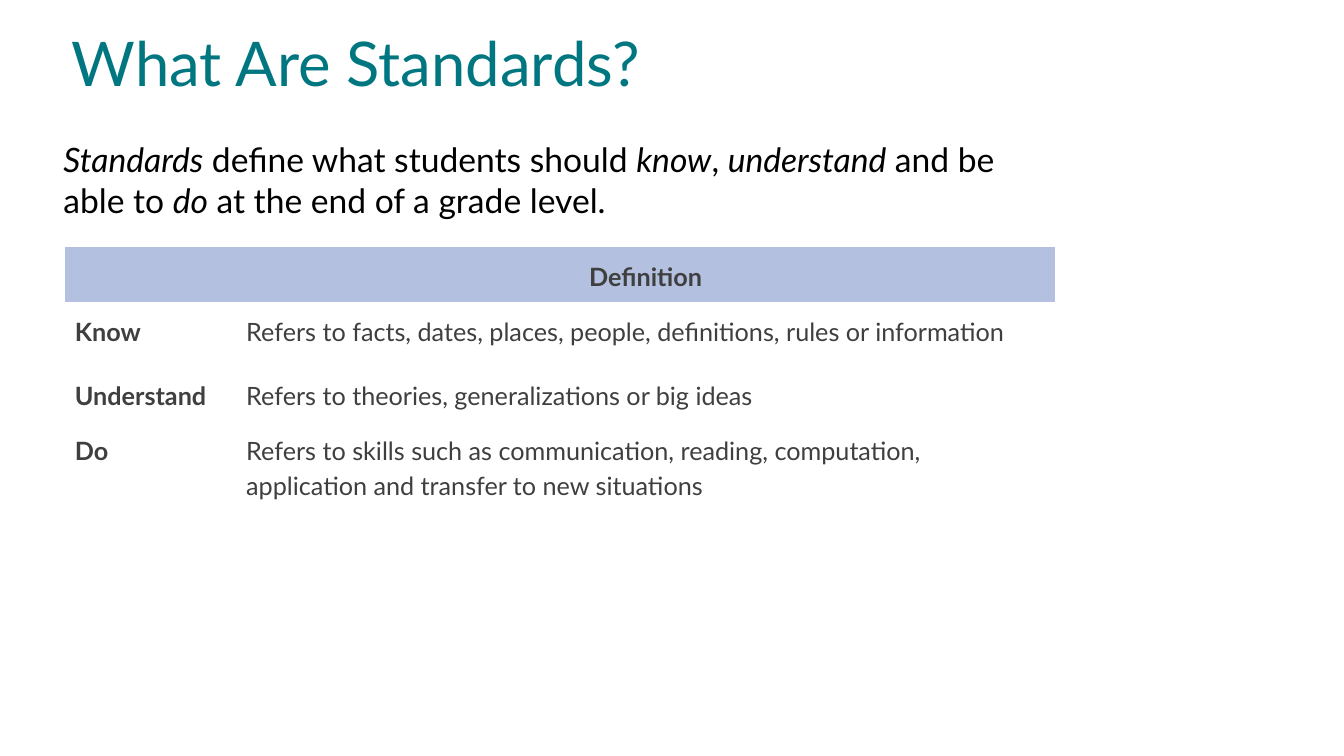
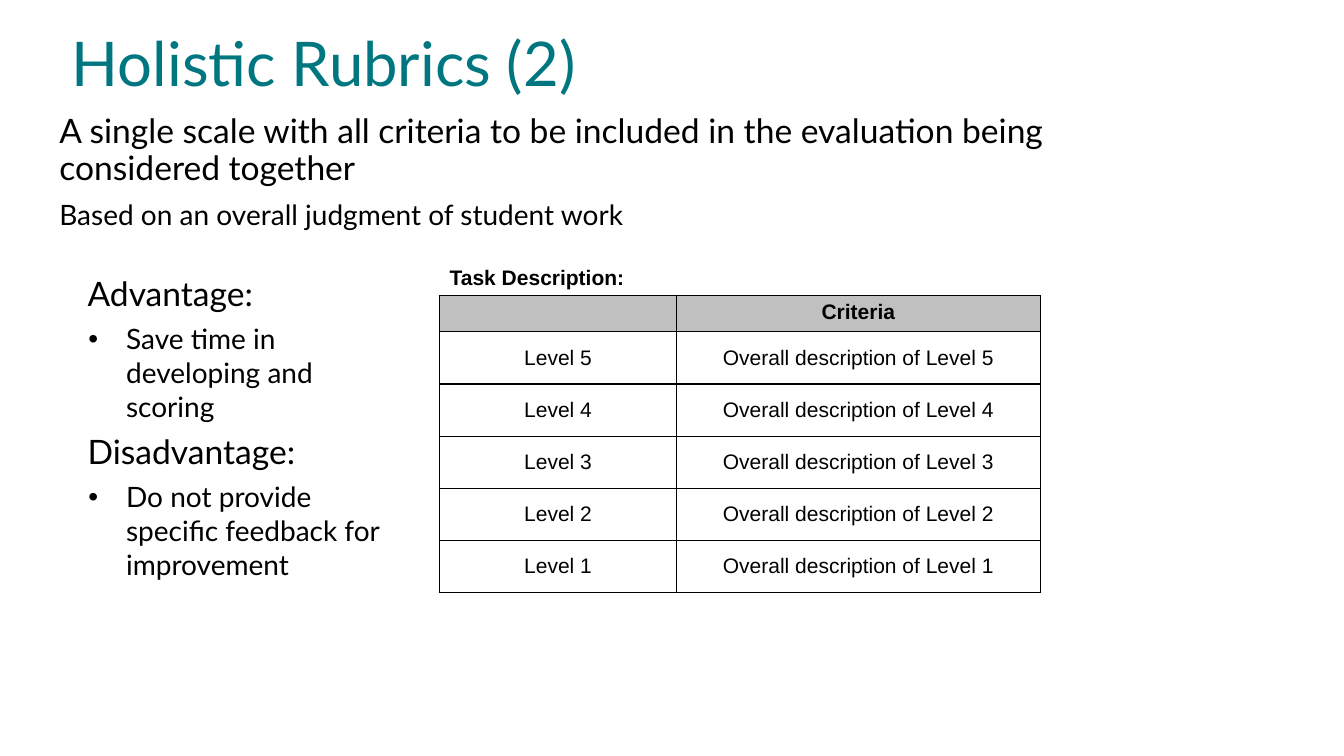
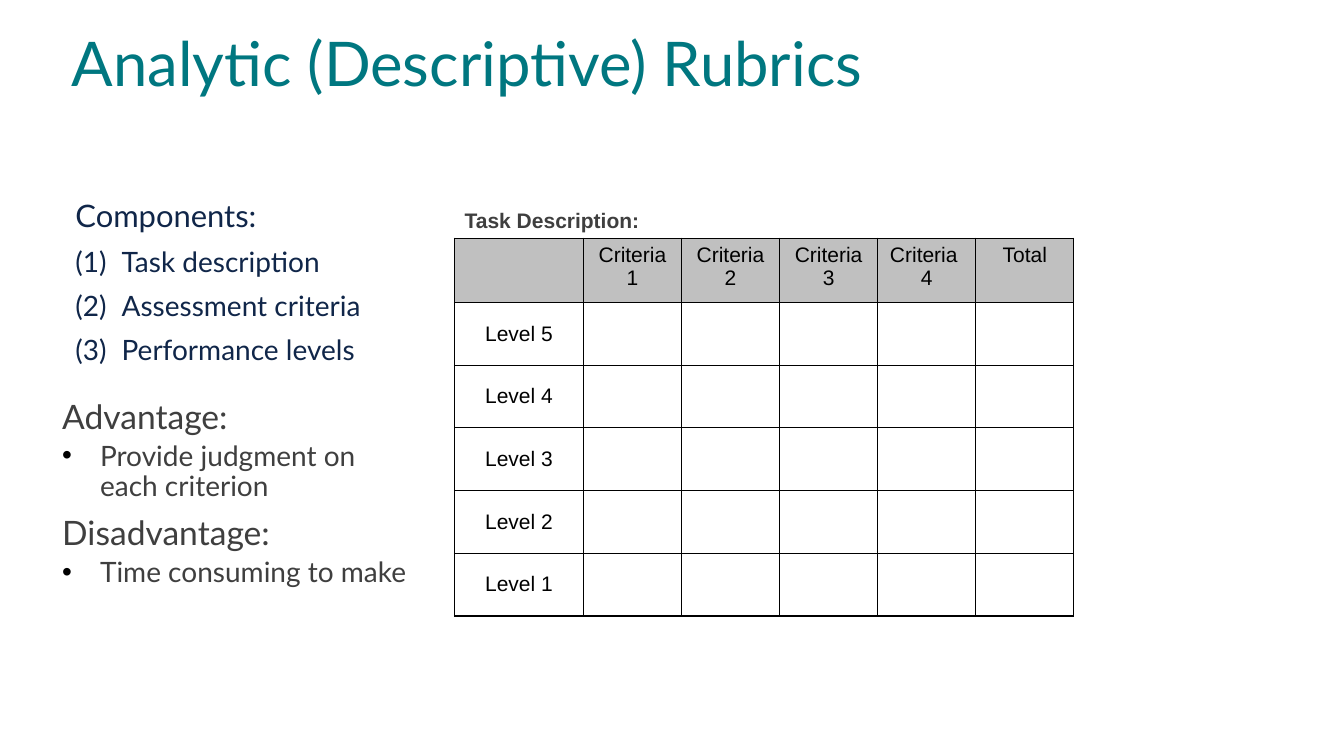
from dataclasses import dataclass

from lxml.etree import SubElement
from pptx import Presentation
from pptx.dml.color import RGBColor
from pptx.enum.text import MSO_ANCHOR as Anchor, MSO_AUTO_SIZE as AutoSize, PP_ALIGN as Align
from pptx.oxml.ns import qn
from pptx.util import Pt


@dataclass(frozen=True)
class Theme:
    heading: str = "007780"
    ink: str = "000000"
    charcoal: str = "3F3F3F"
    navy: str = "102649"
    header_blue: str = "B3C0DF"
    header_gray: str = "C0C0C0"
    text_font: str = "Lato"
    grid_font: str = "Arial"
    title: float = 44
    lead: float = 24
    intro: float = 22.1
    body: float = 20
    definition: float = 18
    grid: float = 15


THEME = Theme()
PLAIN_TABLE = "{2D5ABB26-0587-4C30-8999-92F81FD0307C}"
TITLE_PLACE = (44, 20, 677)
INSETS = (7.2, 3.6)
WIDE_INSETS = (7.2, 7.2)
LEVELS = [f"Level {number}" for number in range(5, 0, -1)]
CAPTION = "Task Description:"

STANDARDS_TEXT = [
    dict(text="*Standards* define what students should *know*, *understand* and be able to *do* "
              "at the end of a grade level.", size=THEME.lead),
]
DEFINITIONS = [
    ("", "Definition"),
    ("Know", "Refers to facts, dates, places, people, definitions, rules or information"),
    ("Understand", "Refers to theories, generalizations or big ideas"),
    ("Do", "Refers to skills such as communication, reading, computation, application "
           "and transfer to new situations"),
]

HOLISTIC_TEXT = [
    dict(text="A single scale with all criteria to be included in the evaluation being considered together",
         size=THEME.lead, spacing=0.9),
    dict(text="Based on an overall judgment of student work", size=THEME.body, spacing=0.9, before=10),
]
HOLISTIC_LEAD = dict(size=THEME.lead, margin=11.5)
HOLISTIC_POINT = dict(size=THEME.body, margin=39, indent=-27, before=6, bullet="•")
HOLISTIC_SIDES = [
    dict(HOLISTIC_LEAD, text="Advantage:"),
    dict(HOLISTIC_POINT, text="Save time in developing and scoring"),
    dict(HOLISTIC_LEAD, text="Disadvantage:", before=6),
    dict(HOLISTIC_POINT, text="Do not provide specific feedback for improvement"),
]
HOLISTIC_GRID = [
    ("", "Criteria"),
    *[(level, f"Overall description of {level}") for level in LEVELS],
]

COMPONENTS = ["Task description", "Assessment criteria", "Performance levels"]
COMPONENT_TEXT = [
    dict(text="Components:", size=THEME.intro, color=THEME.navy, spacing=0.9, margin=39, indent=-39),
    *[dict(text=component, size=THEME.body, color=THEME.navy, spacing=0.9, before=10,
           margin=33, indent=-33, bullet="number") for component in COMPONENTS],
]
ANALYTIC_LEAD = dict(size=THEME.lead, color=THEME.charcoal, spacing=0.9)
ANALYTIC_POINT = dict(size=THEME.body, color=THEME.charcoal, spacing=0.9, before=4,
                      margin=27, indent=-27, bullet="•", bullet_color=THEME.ink)
ANALYTIC_SIDES = [
    dict(ANALYTIC_LEAD, text="Advantage:"),
    dict(ANALYTIC_POINT, text="Provide judgment on each criterion"),
    dict(ANALYTIC_LEAD, text="Disadvantage:", before=10),
    dict(ANALYTIC_POINT, text="Time consuming to make"),
]
ANALYTIC_GRID = [
    ("", "Criteria 1", "Criteria 2", "Criteria 3", "Criteria \n4", "Total"),
    *[(level, "", "", "", "", "") for level in LEVELS],
]


def apply(target, **values):
    for name, value in values.items():
        setattr(target, name, value)


def add_solid_color(parent, color):
    SubElement(parent, qn("a:srgbClr"), val=color)


def add_bullet(properties, bullet, color):
    add_solid_color(SubElement(properties, qn("a:buClr")), color)
    if bullet == "number":
        SubElement(properties, qn("a:buAutoNum"), type="arabicParenBoth")
    else:
        SubElement(properties, qn("a:buFont"), typeface=THEME.grid_font)
        SubElement(properties, qn("a:buChar"), char=bullet)


def write_paragraph(paragraph, text, size, color=THEME.ink, font=THEME.text_font, bold=False,
                    align=Align.LEFT, spacing=None, before=0, margin=0, indent=0,
                    bullet=None, bullet_color=None):
    properties = paragraph._p.get_or_add_pPr()
    properties.set("marL", str(Pt(margin)))
    properties.set("indent", str(Pt(indent)))
    if bullet:
        add_bullet(properties, bullet, bullet_color or color)
    apply(paragraph, alignment=align, space_before=Pt(before))
    if spacing:
        paragraph.line_spacing = spacing
    for position, part in enumerate(text.split("*")):
        if part:
            run = paragraph.add_run()
            run.text = part
            apply(run.font, name=font, size=Pt(size), bold=bold, italic=position % 2 == 1)
            run.font.color.rgb = RGBColor.from_string(color)
    if not text:
        SubElement(paragraph._p, qn("a:endParaRPr"), sz=str(round(size * 100)))


def write_paragraphs(frame, paragraphs):
    for position, content in enumerate(paragraphs):
        paragraph = frame.add_paragraph() if position else frame.paragraphs[0]
        write_paragraph(paragraph, **content)


def set_insets(target, insets):
    side, end = map(Pt, insets)
    apply(target, margin_left=side, margin_right=side, margin_top=end, margin_bottom=end)


def format_frame(frame, paragraphs, insets=INSETS):
    apply(frame, word_wrap=True, auto_size=AutoSize.NONE, vertical_anchor=Anchor.TOP)
    set_insets(frame, insets)
    write_paragraphs(frame, paragraphs)


def add_slide(presentation, title, title_height):
    slide = presentation.slides.add_slide(presentation.slide_layouts[5])
    left, top, width = map(Pt, TITLE_PLACE)
    shape = slide.shapes.title
    apply(shape, left=left, top=top, width=width, height=Pt(title_height))
    format_frame(shape.text_frame, [dict(text=title, size=THEME.title, color=THEME.heading, spacing=0.9)])
    return slide


def add_text(slide, place, paragraphs, insets=INSETS):
    shape = slide.shapes.add_textbox(*map(Pt, place))
    format_frame(shape.text_frame, paragraphs, insets)


def add_plain_table(slide, left, top, widths, heights):
    frame = slide.shapes.add_table(len(heights), len(widths), Pt(left), Pt(top),
                                   Pt(sum(widths)), Pt(sum(heights)))
    table = frame.table
    apply(table, first_row=False, horz_banding=False)
    table._tbl.tblPr.find(qn("a:tableStyleId")).text = PLAIN_TABLE
    for column, width in zip(table.columns, widths):
        column.width = Pt(width)
    for row, height in zip(table.rows, heights):
        row.height = Pt(height)
    return table


def fill_cell(cell, text, fill=None, borders="", anchor=Anchor.TOP, insets=INSETS, **text_format):
    for side in borders:
        line = SubElement(cell._tc.get_or_add_tcPr(), qn(f"a:ln{side}"), w=str(Pt(1)))
        add_solid_color(SubElement(line, qn("a:solidFill")), THEME.ink)
    if fill:
        cell.fill.solid()
        cell.fill.fore_color.rgb = RGBColor.from_string(fill)
    else:
        cell.fill.background()
    cell.vertical_anchor = anchor
    set_insets(cell, insets)
    write_paragraphs(cell.text_frame, [dict(text_format, text=line) for line in text.split("\n")])


def add_definition_table(slide, left, top, widths, heights):
    table = add_plain_table(slide, left, top, widths, heights)
    for row, texts in enumerate(DEFINITIONS):
        for column, text in enumerate(texts):
            header = row == 0
            fill_cell(table.cell(row, column), text, insets=WIDE_INSETS,
                      fill=THEME.header_blue if header else None,
                      align=Align.CENTER if header else Align.LEFT,
                      bold=header or column == 0, size=THEME.definition,
                      color=THEME.charcoal, spacing=1.15)


def add_rubric_table(slide, left, top, widths, heights, grid, caption_color=THEME.ink, bold_header=False):
    table = add_plain_table(slide, left, top, widths, heights)
    grid_text = dict(size=THEME.grid, font=THEME.grid_font)
    for column in range(len(widths)):
        fill_cell(table.cell(0, column), "" if column else CAPTION, borders="B", anchor=Anchor.BOTTOM,
                  bold=True, color=caption_color, **grid_text)
        for row in range(len(grid) + 1, len(heights)):
            fill_cell(table.cell(row, column), "", borders="T", **grid_text)
    table.cell(0, 0).merge(table.cell(0, 1))
    for row, texts in enumerate(grid, 1):
        header = row == 1
        for column, text in enumerate(texts):
            fill_cell(table.cell(row, column), text, borders="LRTB", align=Align.CENTER,
                      fill=THEME.header_gray if header else None,
                      anchor=Anchor.TOP if header else Anchor.MIDDLE,
                      bold=header and bold_header, **grid_text)


def build_standards(presentation):
    slide = add_slide(presentation, "What Are Standards?", 76)
    add_definition_table(slide, 46.3, 176.4, [122.4, 585], [39, 46, 39, 65.5])
    add_text(slide, (38.2, 92.2, 685, 76), STANDARDS_TEXT, WIDE_INSETS)


def build_holistic(presentation):
    slide = add_slide(presentation, "Holistic Rubrics (2)", 104)
    add_text(slide, (35.3, 78.5, 723.6, 384), HOLISTIC_TEXT)
    add_rubric_table(slide, 314, 173.7, [169.2, 259.8], [37.3, 26] + [37.3] * 6,
                     HOLISTIC_GRID, bold_header=True)
    add_text(slide, (44, 191.5, 242.6, 229), HOLISTIC_SIDES)


def build_analytic(presentation):
    slide = add_slide(presentation, "Analytic (Descriptive) Rubrics", 104)
    add_text(slide, (46.8, 139.7, 723.6, 386), COMPONENT_TEXT)
    add_rubric_table(slide, 324.7, 109.6, [92] + [70.1] * 5, [60.5, 46] + [44.8] * 5,
                     ANALYTIC_GRID, caption_color=THEME.charcoal)
    add_text(slide, (37.4, 282.2, 263.5, 173.5), ANALYTIC_SIDES)


def main():
    presentation = Presentation()
    apply(presentation, slide_width=Pt(960), slide_height=Pt(540))
    for build in (build_standards, build_holistic, build_analytic):
        build(presentation)
    presentation.save("out.pptx")


if __name__ == "__main__":
    main()
